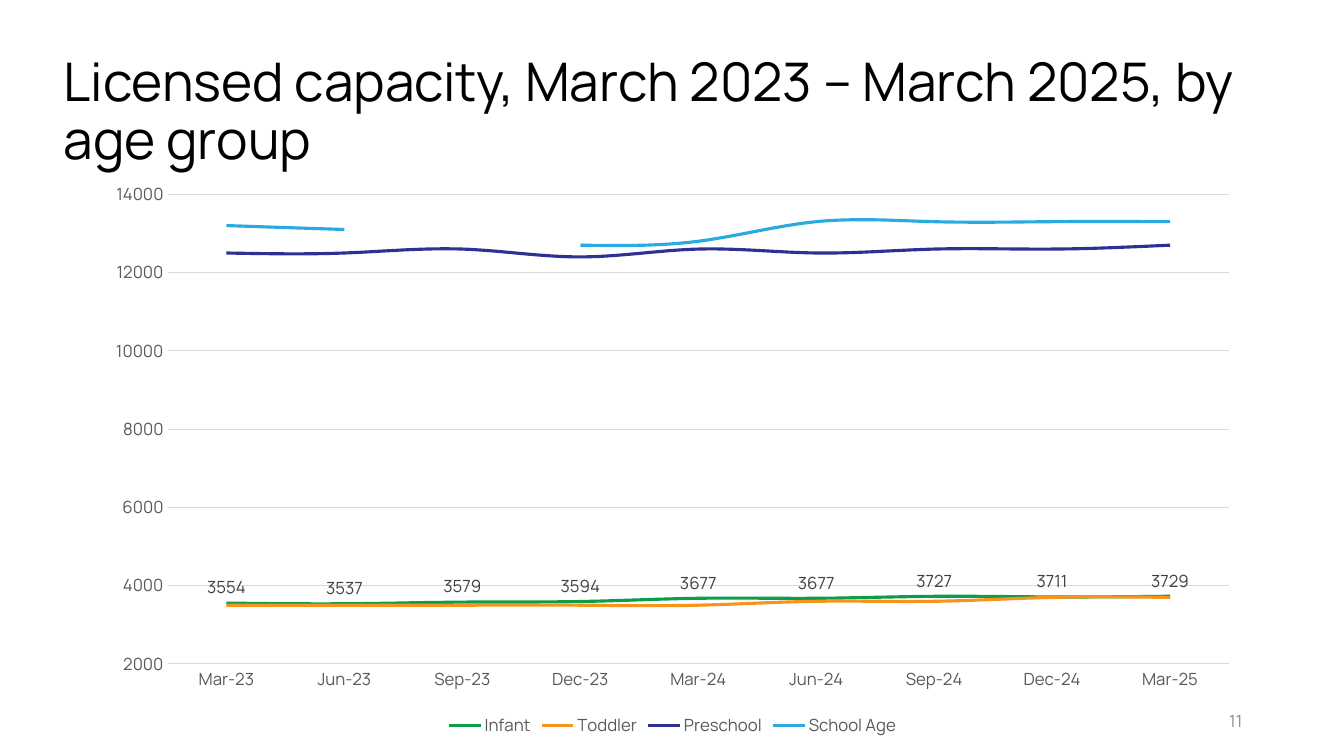
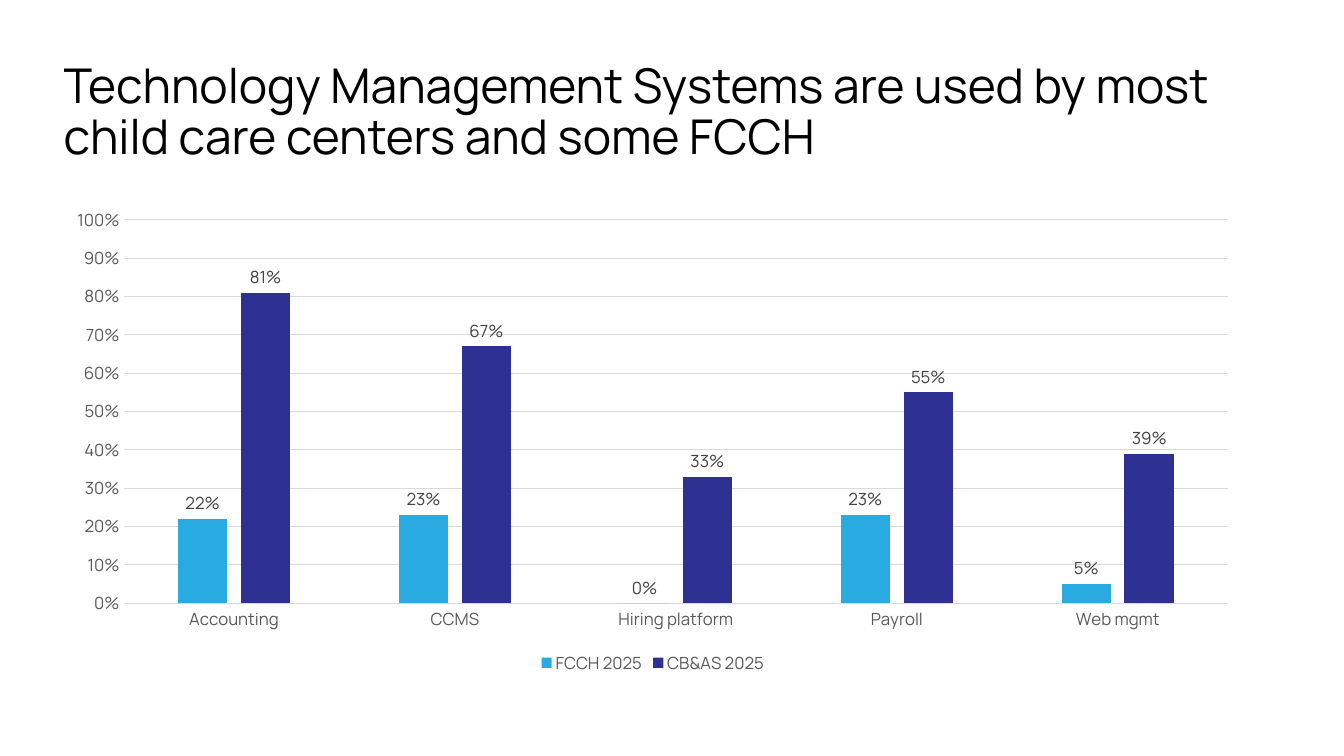
from pptx import Presentation
from pptx.chart.data import CategoryChartData
from pptx.dml.color import RGBColor
from pptx.enum.chart import XL_CHART_TYPE, XL_LABEL_POSITION, XL_LEGEND_POSITION, XL_TICK_MARK
from pptx.enum.text import MSO_ANCHOR, MSO_AUTO_SIZE, PP_ALIGN
from pptx.util import Inches, Pt

LINE, BARS = XL_CHART_TYPE.LINE, XL_CHART_TYPE.COLUMN_CLUSTERED
ABOVE, OUTER = XL_LABEL_POSITION.ABOVE, XL_LABEL_POSITION.OUTSIDE_END
BOTTOM, NO_TICK = XL_LEGEND_POSITION.BOTTOM, XL_TICK_MARK.NONE
MIDDLE, RIGHT, NO_FIT = MSO_ANCHOR.MIDDLE, PP_ALIGN.RIGHT, MSO_AUTO_SIZE.NONE

FONT = "Manrope"
BLACK, GREY, DARK, PALE, RULE = "000000", "595959", "404040", "8C8C8C", "D9D9D9"
GREEN, ORANGE, NAVY, SKY = "0D9C4A", "F7941D", "2E3192", "29ABE2"
TITLE_BOX = (0.53, 0.4, 11.89, 1.45)
PAGE_BOX = (9.42, 6.95, 3, 0.4)

SLIDES = [
    {
        "title": "Licensed capacity, March 2023 – March 2025, by age group",
        "size": 38,
        "box": (0.92, 1.7, 11.5, 5.65),
        "kind": LINE,
        "scale": (2000, 14000, 2000),
        "format": "General",
        "cats": ["Mar-23", "Jun-23", "Sep-23", "Dec-23", "Mar-24",
                 "Jun-24", "Sep-24", "Dec-24", "Mar-25"],
        "series": [
            ("Infant", GREEN, [3554, 3537, 3579, 3594, 3677, 3677, 3727, 3711, 3729]),
            ("Toddler", ORANGE, [3500, 3500, 3500, 3500, 3500, 3600, 3600, 3700, 3700]),
            ("Preschool", NAVY,
             [12500, 12500, 12600, 12400, 12600, 12500, 12600, 12600, 12700]),
            ("School Age", SKY,
             [13200, 13100, None, 12700, 12800, 13300, 13300, 13300, 13300]),
        ],
        "labels": ["Infant"],
        "page": "11",
    },
    {
        "title": "Technology Management Systems are used by most child care centers and some FCCH",
        "size": 34.2,
        "box": (0.53, 1.97, 11.89, 4.76),
        "kind": BARS,
        "scale": (0, 1, 0.1),
        "format": "0%",
        "cats": ["Accounting", "CCMS", "Hiring platform", "Payroll", "Web mgmt"],
        "series": [
            ("FCCH 2025", SKY, [0.22, 0.23, 0, 0.23, 0.05]),
            ("CB&AS 2025", NAVY, [0.81, 0.67, 0.33, 0.55, 0.39]),
        ],
        "labels": ["FCCH 2025", "CB&AS 2025"],
    },
]


def color(text):
    return RGBColor.from_string(text)


def style(font, size, tint):
    font.name, font.size = FONT, Pt(size)
    font.color.rgb = color(tint)


def stroke(line, tint, width):
    line.color.rgb = color(tint)
    line.width = Pt(width)


def lengths(box):
    return [Inches(n) for n in box]


def add_title(slide, text, size):
    title = slide.shapes.title
    title.left, title.top, title.width, title.height = lengths(TITLE_BOX)
    frame = title.text_frame
    frame.text = text
    frame.auto_size, frame.word_wrap = NO_FIT, True
    frame.vertical_anchor = MIDDLE
    para = frame.paragraphs[0]
    para.alignment, para.line_spacing = PP_ALIGN.LEFT, 0.9
    style(para.font, size, BLACK)


def add_page(slide, text):
    frame = slide.shapes.add_textbox(*lengths(PAGE_BOX)).text_frame
    frame.text = text
    frame.word_wrap, frame.vertical_anchor = True, MIDDLE
    para = frame.paragraphs[0]
    para.alignment = RIGHT
    style(para.font, 12, PALE)


def style_axes(chart, item):
    cats, vals = chart.category_axis, chart.value_axis
    for axis in (cats, vals):
        axis.major_tick_mark = axis.minor_tick_mark = NO_TICK
        style(axis.tick_labels.font, 12, GREY)
    stroke(cats.format.line, RULE, 0.75)
    vals.format.line.fill.background()
    stroke(vals.major_gridlines.format.line, RULE, 0.75)
    vals.minimum_scale, vals.maximum_scale, vals.major_unit = item["scale"]
    vals.tick_labels.number_format = item["format"]
    vals.tick_labels.number_format_is_linked = False


def add_labels(series, item, place):
    labels = series.data_labels
    labels.show_value, labels.position = True, place
    labels.number_format = item["format"]
    labels.number_format_is_linked = False
    style(labels.font, 12, DARK)


def add_chart(slide, item):
    data = CategoryChartData(number_format=item["format"])
    data.categories = item["cats"]
    for name, _, vals in item["series"]:
        data.add_series(name, vals)
    kind = item["kind"]
    chart = slide.shapes.add_chart(kind, *lengths(item["box"]), data).chart
    style(chart.font, 10, BLACK)
    chart.has_title = False
    chart.has_legend = True
    chart.legend.position = BOTTOM
    chart.legend.include_in_layout = False
    style(chart.legend.font, 12, GREY)
    style_axes(chart, item)
    plot = chart.plots[0]
    plot.vary_by_categories = False
    if kind == BARS:
        plot.gap_width, plot.overlap = 219, -27
    for series, (name, tint, _) in zip(plot.series, item["series"]):
        if kind == LINE:
            series.smooth = True
            stroke(series.format.line, tint, 2.25)
        else:
            series.format.fill.solid()
            series.format.fill.fore_color.rgb = color(tint)
        if name in item["labels"]:
            add_labels(series, item, ABOVE if kind == LINE else OUTER)


def main():
    deck = Presentation()
    deck.slide_width, deck.slide_height = Inches(13.33), Inches(7.5)
    for item in SLIDES:
        slide = deck.slides.add_slide(deck.slide_layouts[5])
        add_title(slide, item["title"], item["size"])
        add_chart(slide, item)
        if "page" in item:
            add_page(slide, item["page"])
    deck.save("out.pptx")


if __name__ == "__main__":
    main()
